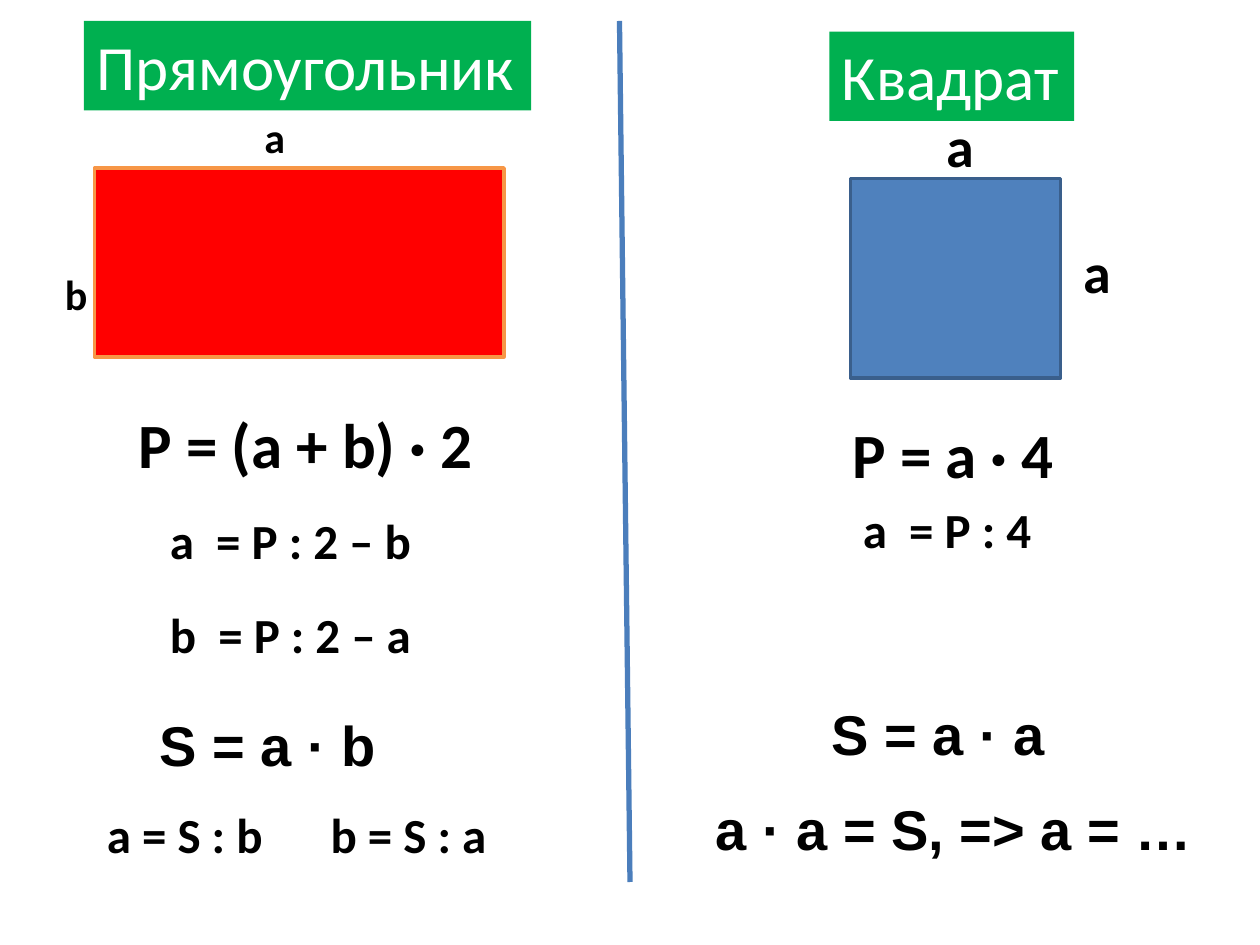
from dataclasses import dataclass

from lxml import etree
from pptx import Presentation
from pptx.dml.color import RGBColor
from pptx.enum.shapes import MSO_CONNECTOR, MSO_SHAPE
from pptx.enum.text import MSO_ANCHOR
from pptx.oxml.ns import qn
from pptx.util import Inches, Pt

RECTANGLE = MSO_SHAPE.RECTANGLE
STRAIGHT = MSO_CONNECTOR.STRAIGHT
TOP, MIDDLE = MSO_ANCHOR.TOP, MSO_ANCHOR.MIDDLE

WHITE = RGBColor(0xFF, 0xFF, 0xFF)
BLACK = RGBColor(0x00, 0x00, 0x00)
GREEN = RGBColor(0x00, 0xB0, 0x50)
RED = RGBColor(0xFF, 0x00, 0x00)
ORANGE = RGBColor(0xF7, 0x96, 0x46)
BLUE = RGBColor(0x4F, 0x81, 0xBD)
DARK_BLUE = RGBColor(0x3A, 0x5F, 0x8C)
DIVIDER_BLUE = RGBColor(0x4B, 0x7E, 0xBC)

CELL = Inches(10) / 120
HALF = 60


@dataclass
class Box:
    column: float
    row: float
    columns: float
    rows: float

    def inside(self, column, row, columns, rows):
        return Box(self.column + column, self.row + row, columns, rows)

    def lengths(self):
        return [round(CELL * n) for n in (self.column, self.row, self.columns, self.rows)]


@dataclass
class Label:
    text: str
    column: float
    row: float
    columns: float
    size: int
    font: str = "Calibri"
    tab: float = 0

    def box_in(self, panel):
        rows = self.size * 1.22 / 6 + 1.2
        return panel.inside(self.column, self.row, self.columns, rows)


def write(shape, label, color, bold):
    is_area = label.font == "Arial"
    frame = shape.text_frame
    frame_format = {
        "word_wrap": is_area or label.tab > 0,
        "vertical_anchor": MIDDLE if is_area else TOP,
    }
    for name, value in frame_format.items():
        setattr(frame, name, value)
    para = frame.paragraphs[0]
    para.alignment = 1
    if label.tab:
        stops = etree.SubElement(para._p.get_or_add_pPr(), qn("a:tabLst"))
        etree.SubElement(stops, qn("a:tab"), pos=str(round(label.tab * CELL)), algn="l")
    span = para.add_run()
    span.text = label.text
    for name, value in {"name": label.font, "size": Pt(label.size), "bold": bold}.items():
        setattr(span.font, name, value)
    span.font.color.rgb = color


def draw_rectangle(page, box, fill, outline=None):
    shape = page.shapes.add_shape(RECTANGLE, *box.lengths())
    shape.shadow.inherit = False
    shape.fill.solid()
    shape.fill.fore_color.rgb = fill
    if outline is None:
        shape.line.fill.background()
    else:
        shape.line.color.rgb = outline
        shape.line.width = Pt(2)
    return shape


def draw_panel(page, panel, title, figure, colors, labels):
    draw_rectangle(page, panel.inside(*figure), *colors)
    heading = draw_rectangle(page, title.box_in(panel), GREEN)
    write(heading, title, WHITE, False)
    for label in labels:
        text_box = page.shapes.add_textbox(*label.box_in(panel).lengths())
        write(text_box, label, BLACK, True)


def draw_divider(page, box):
    left, top, width, height = box.lengths()
    divider = page.shapes.add_connector(STRAIGHT, left, top, left + width, top + height)
    divider.line.color.rgb = DIVIDER_BLUE
    divider.line.width = Pt(3)
    etree.SubElement(divider._element.spPr, qn("a:effectLst"))


def main():
    deck = Presentation()
    deck.slide_width, deck.slide_height = Inches(10), Inches(7.5)
    page = deck.slides.add_slide(deck.slide_layouts[6])

    draw_panel(
        page,
        Box(0, 0, HALF, 90),
        Label("Прямоугольник", 8, 2, 42.6, 36),
        (9, 16, 39, 18),
        (RED, ORANGE),
        [
            Label("а", 24, 10, 4.4, 24),
            Label("b", 5, 25, 4.6, 24),
            Label("P = (a + b) · 2", 12, 38, 34.6, 36),
            Label("a  = P : 2 – b", 15, 48, 26.8, 28),
            Label("b  = P : 2 – a", 15, 57, 26.8, 28),
            Label("S = a · b", 14, 67, 30, 32, "Arial"),
            Label("a = S : b\tb = S : a", 9, 76, 41, 28, tab=21.3),
        ],
    )
    draw_panel(
        page,
        Box(HALF, 0, HALF, 90),
        Label("Квадрат", 19, 3, 23.3, 36),
        (21, 17, 20, 19),
        (BLUE, DARK_BLUE),
        [
            Label("а", 42, 22, 5, 32),
            Label("а", 29, 10, 5, 32),
            Label("P = a · 4", 20, 39, 21.8, 36),
            Label("a  = P : 4", 21, 47, 19.8, 28),
            Label("S = a · a", 18, 66, 30, 32, "Arial"),
            Label("a · a = S, => a = …", 7, 75, 48, 32, "Arial"),
        ],
    )
    draw_divider(page, Box(59, 2, 1, 82))
    deck.save("out.pptx")


if __name__ == "__main__":
    main()
